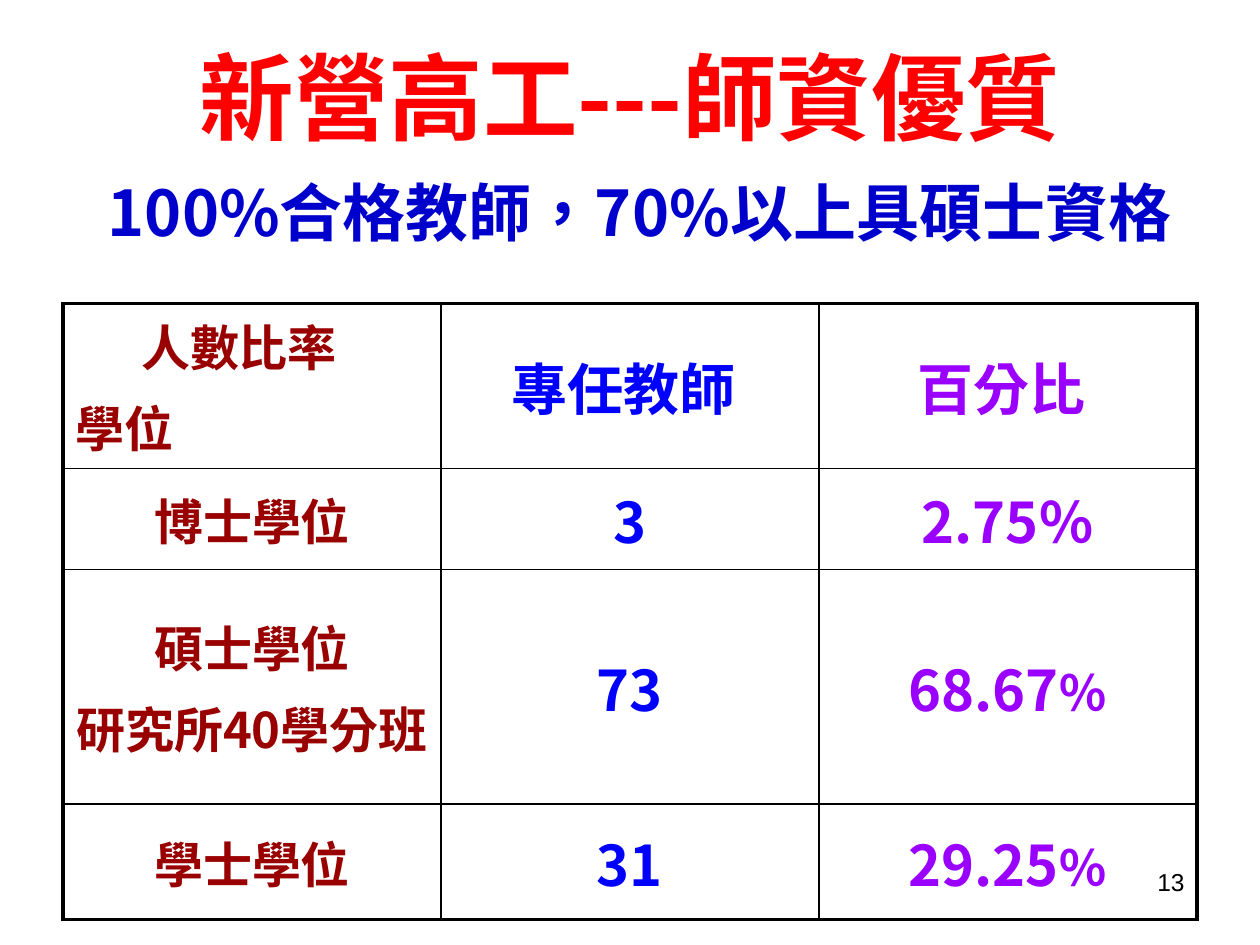
from dataclasses import dataclass

from lxml import etree
from pptx import Presentation
from pptx import util as u
from pptx.dml.color import RGBColor
from pptx.enum import text
from pptx.oxml.ns import qn


@dataclass(frozen=True)
class Theme:
    face: str = "Noto Sans CJK SC"
    number_face: str = "Arial"
    language: str = "zh-TW"
    red: str = "FF0000"
    navy: str = "0000CC"
    black: str = "000000"
    columns: tuple = ("990000", "0000FF", "9900FF")
    heading: int = 54
    gap: int = 48
    subheading: int = 36
    large: int = 32
    label: int = 28
    number: int = 14
    outer: float = 2.25
    inner: float = 1


THEME = Theme()
MARGIN = 0.5
COLUMN = 3
ROWS = (1.31, 0.8, 1.86, 0.92)  # tall enough for every line of text
TABLE_TOP = 2.41

# Each cell lists paragraphs; each paragraph lists (wording, size) spans
BIG, SMALL = THEME.large, THEME.label
CELLS = [
    [[[("人數比率", SMALL)], [("學位", SMALL)]],
     [[("專任教師 ", BIG)]], [[("百分比 ", BIG)]]],
    [[[("博士學位", SMALL)]], [[("3", BIG)]], [[("2.75％", BIG)]]],
    [[[("碩士學位", SMALL)], [("研究所40學分班", SMALL)]],
     [[("73", BIG)]], [[("68.67", BIG), ("％", SMALL)]]],
    [[[("學士學位", SMALL)]], [[("31", BIG)]], [[("29.25", BIG), ("％", SMALL)]]],
]


def apply(target, values):
    for name, value in values.items():
        setattr(target, name, value)


def place(shape, left, top, width, height):
    sides = dict(left=left, top=top, width=width, height=height)
    apply(shape, {name: u.Inches(value) for name, value in sides.items()})


def add_span(para, wording, size, color, bold=True, face=THEME.face):
    span = para.add_run()
    span.text = wording
    apply(span.font, dict(size=u.Pt(size), bold=bold, name=face))
    span.font.color.rgb = RGBColor.from_string(color)
    # East Asian characters take their own typeface and language
    span.font._element.set("lang", THEME.language)
    east = etree.SubElement(span.font._element, qn("a:ea"))
    east.set("typeface", face)


def fill_title(page):
    title = page.shapes.title
    place(title, MARGIN, 0.3, 3 * COLUMN, 1.72)
    apply(title.text_frame, dict(
        word_wrap=True, auto_size=text.MSO_AUTO_SIZE.NONE,
        vertical_anchor=text.MSO_ANCHOR.MIDDLE))
    para = title.text_frame.paragraphs[0]
    para.alignment = text.PP_ALIGN.CENTER
    add_span(para, "新營高工---師資優質", THEME.heading, THEME.red)
    para.add_line_break()
    add_span(para, " ", THEME.gap, THEME.black, bold=False)
    add_span(para, "100%合格教師，70%以上具碩士資格", THEME.subheading, THEME.navy)


def add_page_number(page):
    box = page.shapes.add_textbox(
        *(u.Inches(value) for value in (7.17, 6.83, 2.33, 0.52)))
    box.text_frame.word_wrap = True
    para = box.text_frame.paragraphs[0]
    para.alignment = text.PP_ALIGN.RIGHT
    add_span(para, "13", THEME.number, THEME.black, False, THEME.number_face)


def set_borders(cell, row, column):
    """Heavy lines on the table's outside edges, thin lines inside."""
    outside = dict(lnL=column == 0, lnR=column == 2,
                   lnT=row == 0, lnB=row == len(ROWS) - 1)
    props = cell._tc.get_or_add_tcPr()
    for index, (tag, heavy) in enumerate(outside.items()):
        width = u.Pt(THEME.outer if heavy else THEME.inner)
        line = etree.Element(qn("a:" + tag), w=str(int(width)))
        fill = etree.SubElement(line, qn("a:solidFill"))
        etree.SubElement(fill, qn("a:srgbClr"), val=THEME.black)
        props.insert(index, line)


def fill_cell(cell, paragraphs, row, column):
    corner = row == column == 0
    cell.fill.background()
    cell.vertical_anchor = (
        text.MSO_ANCHOR.TOP if corner else text.MSO_ANCHOR.MIDDLE)
    for index, spans in enumerate(paragraphs):
        frame = cell.text_frame
        para = frame.add_paragraph() if index else frame.paragraphs[0]
        para.alignment = (
            text.PP_ALIGN.LEFT if corner else text.PP_ALIGN.CENTER)
        if index:
            para.space_before = u.Pt(0.2 * spans[0][1])
        elif corner:
            # The upper corner label is set in from the left
            para._p.get_or_add_pPr().set("marL", str(int(u.Inches(0.52))))
        for wording, size in spans:
            add_span(para, wording, size, THEME.columns[column])
    set_borders(cell, row, column)


def add_degree_table(page):
    frame = page.shapes.add_table(
        len(ROWS), 3, u.Inches(MARGIN), u.Inches(TABLE_TOP),
        u.Inches(3 * COLUMN), u.Inches(sum(ROWS)))
    table = frame.table
    apply(table, dict(first_row=False, horz_banding=False))
    for row, height in enumerate(ROWS):
        table.rows[row].height = u.Inches(height)
        for column, paragraphs in enumerate(CELLS[row]):
            fill_cell(table.cell(row, column), paragraphs, row, column)


def main():
    deck = Presentation()
    apply(deck, dict(slide_width=u.Inches(10), slide_height=u.Inches(7.5)))
    page = deck.slides.add_slide(deck.slide_layouts[5])
    add_page_number(page)
    fill_title(page)
    add_degree_table(page)
    deck.save("out.pptx")


if __name__ == "__main__":
    main()
